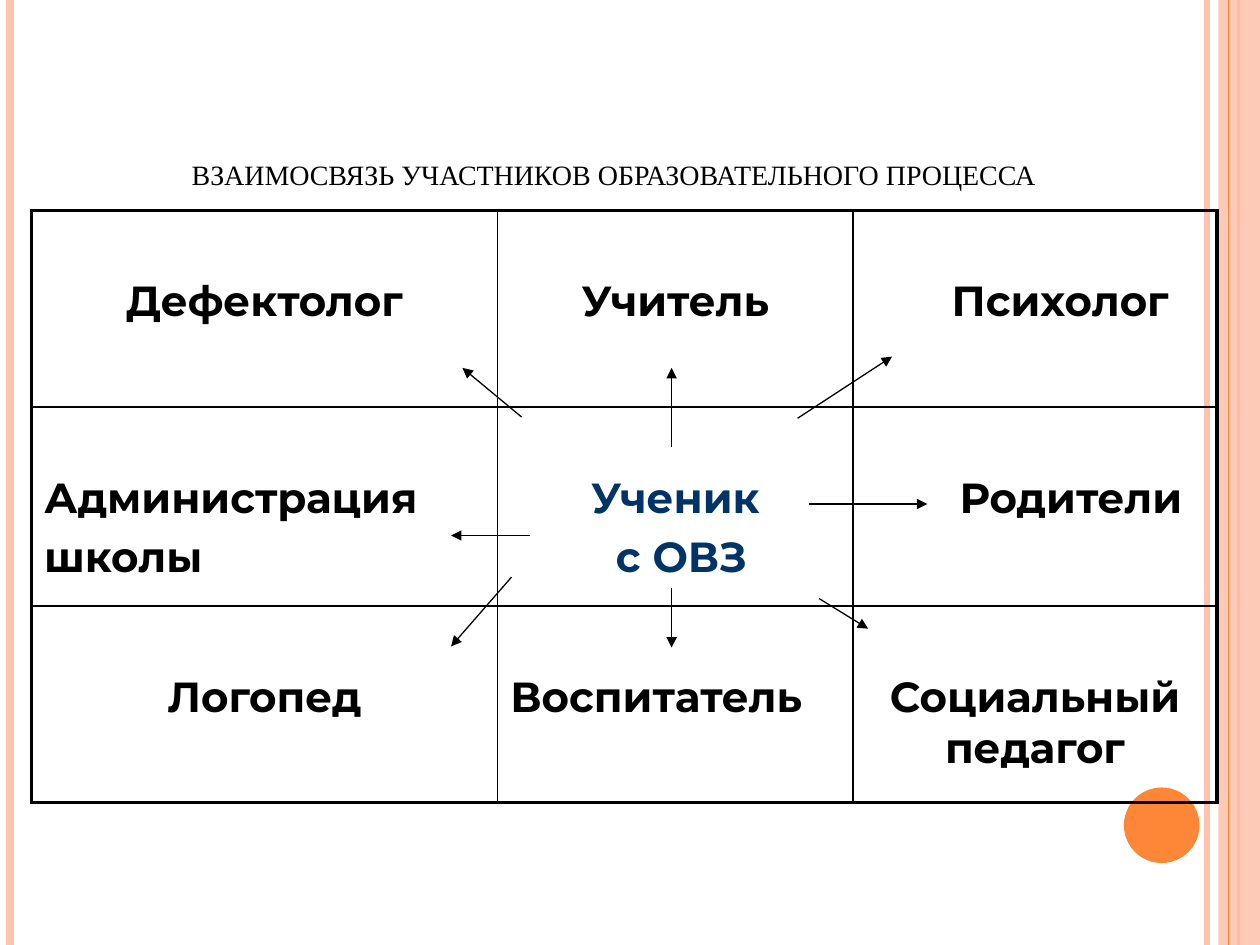
from lxml import etree
from pptx import Presentation
from pptx.dml.color import RGBColor
from pptx.enum.shapes import MSO_CONNECTOR, MSO_SHAPE
from pptx.enum.text import MSO_ANCHOR, PP_ALIGN
from pptx.oxml.ns import qn
from pptx.util import Inches, Pt

STRAIGHT = MSO_CONNECTOR.STRAIGHT
RECTANGLE, OVAL = MSO_SHAPE.RECTANGLE, MSO_SHAPE.OVAL
LEFT, CENTER = PP_ALIGN.LEFT, PP_ALIGN.CENTER
BOTTOM = MSO_ANCHOR.BOTTOM
PINK, ORANGE, BLACK, NAVY = "FEC3AE", "FE8637", "000000", "003366"


def rgb(color):
    return RGBColor.from_string(color)


def draw_line(start, end, color, width):
    line = slide.shapes.add_connector(STRAIGHT, *[Inches(v) for v in (*start, *end)])
    line.line.color.rgb = rgb(color)
    line.line.width = Pt(width)
    etree.SubElement(line._element.spPr, qn("a:effectLst"))
    return line


prs = Presentation()
prs.slide_width, prs.slide_height = Inches(10), Inches(7.5)
slide = prs.slides.add_slide(prs.slide_layouts[5])

for x, color, width in [(9.58, PINK, 3), (0.08, PINK, 4.5), (9.83, ORANGE, 1.5)]:
    draw_line((x, 0), (x, 7.5), color, width)

for preset, box, color, opacity in [
    (RECTANGLE, (9.67, 0, 0.33, 7.5), PINK, 87),
    (OVAL, (8.92, 6.25, 0.6, 0.6), ORANGE, 100),
]:
    decoration = slide.shapes.add_shape(preset, *[Inches(v) for v in box])
    decoration.shadow.inherit = False
    decoration.fill.solid()
    decoration.fill.fore_color.rgb = rgb(color)
    decoration.line.fill.background()
    tint = decoration._element.spPr.find(f".//{qn('a:srgbClr')}")
    etree.SubElement(tint, qn("a:alpha"), val=str(opacity * 1000))

draw_line((9.75, 0), (9.75, 7.5), ORANGE, 0.75)

title = slide.shapes.title
title_box = {"left": 0, "top": 0.33, "width": 9.58, "height": 1.25}
for name, value in title_box.items():
    setattr(title, name, Inches(value))
heading = title.text_frame
for name, value in {"vertical_anchor": BOTTOM, "margin_left": Inches(0.26)}.items():
    setattr(heading, name, value)
heading.text = "взаимосвязь участников образовательного процесса"
heading.paragraphs[0].alignment = CENTER
heading_run = heading.paragraphs[0].runs[0]
for name, value in {"size": Pt(20), "name": "Times New Roman"}.items():
    setattr(heading_run.font, name, value)
heading_run.font.color.rgb = rgb(BLACK)
heading_run._r.get_or_add_rPr().set("cap", "small")

column_widths = [3.7, 2.82, 2.89]
row_heights = [1.56, 1.58, 1.56]
participants = [
    [("Дефектолог", CENTER, 0), ("Учитель", CENTER, 0), ("Психолог", CENTER, 0.4)],
    [("Администрация\nшколы", LEFT, 0), ("Ученик\n с ОВЗ", CENTER, 0), ("Родители", CENTER, 0.57)],
    [("Логопед", CENTER, 0), ("Воспитатель", LEFT, 0), ("Социальный педагог", CENTER, 0)],
]
table = slide.shapes.add_table(
    3, 3, Inches(0.25), Inches(1.67), Inches(sum(column_widths)), Inches(sum(row_heights))
).table
table.first_row = table.horz_banding = False
for column, width in zip(table.columns, column_widths):
    column.width = Inches(width)
for row, height in zip(table.rows, row_heights):
    row.height = Inches(height)

label_font = {"name": "Montserrat", "size": Pt(24), "bold": True}
for r, row in enumerate(participants):
    for c, (label, alignment, indent) in enumerate(row):
        cell = table.cell(r, c)
        cell.text = label
        cell.margin_top = Inches(0.52)
        cell.margin_left = Inches(0.1 + indent)
        for i, paragraph in enumerate(cell.text_frame.paragraphs):
            paragraph.alignment = alignment
            paragraph.space_before = Pt(4.8 if i else 0)
            font = paragraph.runs[0].font
            for name, value in label_font.items():
                setattr(font, name, value)
            font.color.rgb = rgb(NAVY if r == c == 1 else BLACK)
        outer_edges = {"a:lnL": c == 0, "a:lnR": c == 2, "a:lnT": r == 0, "a:lnB": r == 2}
        cell_format = cell._tc.get_or_add_tcPr()
        for edge, is_outer in outer_edges.items():
            border = etree.SubElement(cell_format, qn(edge), w=str(Pt(2.25 if is_outer else 1)))
            border_fill = etree.SubElement(border, qn("a:solidFill"))
            etree.SubElement(border_fill, qn("a:srgbClr"), val=BLACK)
        cell.fill.background()

arrows = [
    ((4.14, 3.31), (3.67, 2.92)),
    ((6.33, 3.32), (7.08, 2.83)),
    ((5.33, 3.55), (5.33, 2.92)),
    ((4.06, 4.58), (3.58, 5.13)),
    ((6.5, 4.75), (6.89, 4.99)),
    ((5.33, 4.67), (5.33, 5.14)),
    ((4.21, 4.25), (3.58, 4.25)),
    ((6.42, 4), (7.36, 4)),
]
for start, end in arrows:
    arrow = draw_line(start, end, BLACK, 0.75)
    etree.SubElement(arrow.line._get_or_add_ln(), qn("a:tailEnd"), type="triangle")

prs.save("out.pptx")
